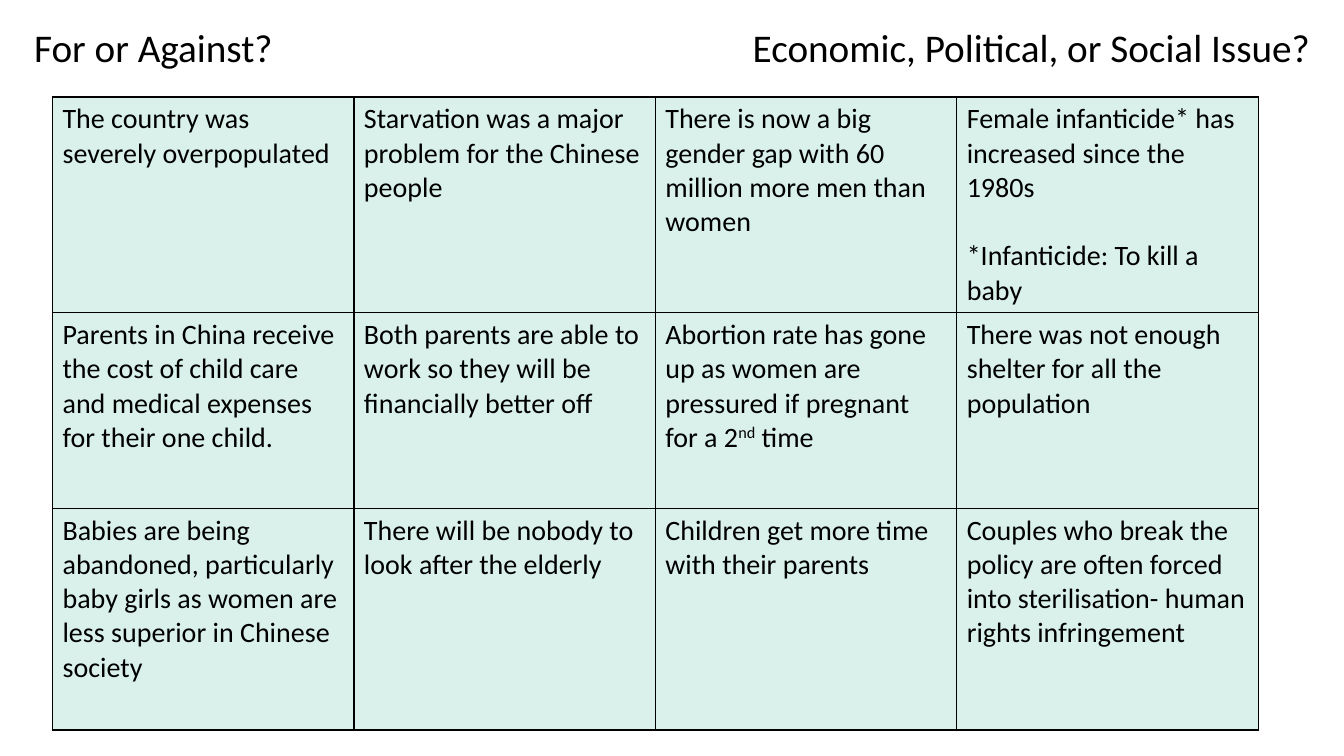
"""Build a slide that sorts arguments about the one-child policy."""
from pptx import Presentation
from pptx.dml.color import RGBColor
from pptx.enum.text import MSO_AUTO_SIZE as Fit
from pptx.oxml import parse_xml
from pptx.oxml.ns import nsdecls
from pptx.util import Pt

BLACK = RGBColor(0x00, 0x00, 0x00)
MINT = RGBColor(0xD9, 0xF1, 0xEA)
FONT = "Calibri"

HEADS = [
    ("For or Against?", 17.3, 291.6),
    ("Economic, Political, or Social Issue?", 530.6, 447.1),
]
CARDS = [
    [
        ["The country was severely overpopulated"],
        ["Starvation was a major problem for the Chinese people"],
        ["There is now a big gender gap with 60 million more men than women"],
        ["Female infanticide* has increased since the 1980s",
         "*Infanticide: To kill a baby"],
    ],
    [
        ["Parents in China receive the cost of child care and medical "
         "expenses for their one child."],
        ["Both parents are able to work so they will be financially better off"],
        ["Abortion rate has gone up as women are pressured if pregnant "
         "for a 2|nd| time"],
        ["There was not enough shelter for all the population"],
    ],
    [
        ["Babies are being abandoned, particularly baby girls as women are "
         "less superior in Chinese society"],
        ["There will be nobody to look after the elderly"],
        ["Children get more time with their parents"],
        ["Couples who break the policy are often forced into "
         "sterilisation- human rights infringement"],
    ],
]
LEFT, TOP, WIDTH = 37.5, 69.3, 861.2
ROWS = [146.2, 139.7, 158.4]
LINE = 24.4


def style(para, size):
    for run in para.runs:
        run.font.name = FONT
        run.font.size = Pt(size)
        run.font.color.rgb = BLACK


def write(para, text):
    for i, part in enumerate(text.split("|")):
        run = para.add_run()
        run.text = part
        if i % 2:
            run._r.get_or_add_rPr().set("baseline", "30000")
    style(para, 20)


def border(cell):
    props = cell._tc.get_or_add_tcPr()
    for i, side in enumerate(("lnL", "lnR", "lnT", "lnB")):
        props.insert(i, parse_xml(
            f'<a:{side} {nsdecls("a")} w="{Pt(1)}"><a:solidFill>'
            f'<a:srgbClr val="{BLACK}"/></a:solidFill></a:{side}>'))


def fill(cell, lines):
    cell.fill.solid()
    cell.fill.fore_color.rgb = MINT
    border(cell)
    frame = cell.text_frame
    for i, line in enumerate(lines):
        para = frame.add_paragraph() if i else frame.paragraphs[0]
        if i:
            para.space_before = Pt(LINE)
        write(para, line)


def main():
    deck = Presentation()
    deck.slide_width, deck.slide_height = Pt(960), Pt(540)
    slide = deck.slides.add_slide(deck.slide_layouts[6])

    grid = slide.shapes.add_table(
        len(CARDS), len(CARDS[0]), Pt(LEFT), Pt(TOP), Pt(WIDTH), Pt(sum(ROWS))).table
    grid.first_row = grid.horz_banding = False
    for col in grid.columns:
        col.width = Pt(WIDTH / len(CARDS[0]))
    for r, cards in enumerate(CARDS):
        grid.rows[r].height = Pt(ROWS[r])
        for c, lines in enumerate(cards):
            fill(grid.cell(r, c), lines)

    for text, left, width in HEADS:
        frame = slide.shapes.add_textbox(Pt(left), Pt(13), Pt(width), Pt(41)).text_frame
        frame.word_wrap = True
        frame.auto_size = Fit.SHAPE_TO_FIT_TEXT
        frame.text = text
        style(frame.paragraphs[0], 28)

    deck.save("out.pptx")


if __name__ == "__main__":
    main()
